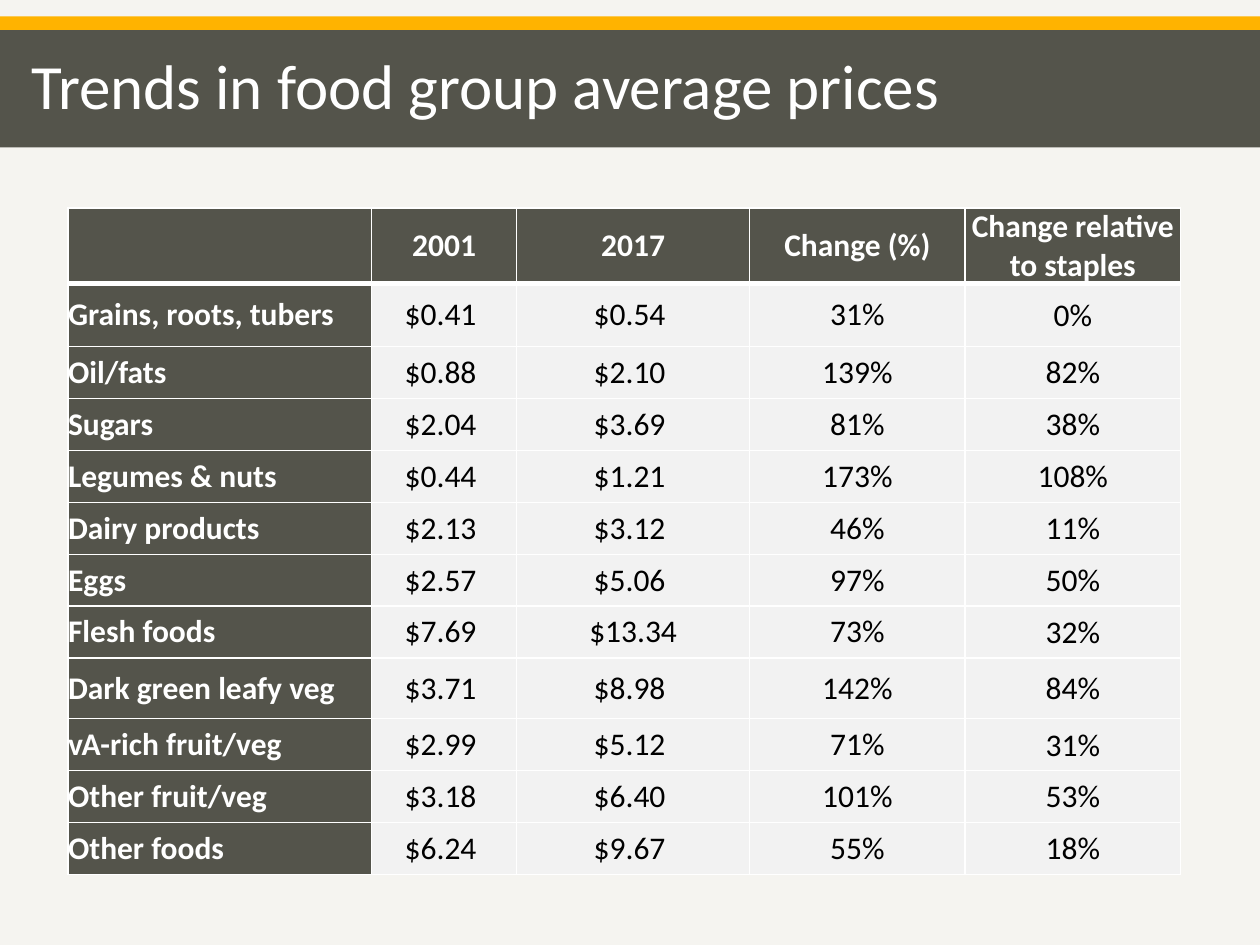
from lxml.etree import SubElement
from pptx import Presentation
from pptx.dml.color import RGBColor as RGB
from pptx.enum.shapes import MSO_SHAPE as SHAPE
from pptx.enum.text import MSO_ANCHOR as ANCHOR, PP_ALIGN as ALIGN
from pptx.oxml.ns import qn
from pptx.util import Inches, Pt

THEME = {
    "font": "Calibri", "title": Pt(36), "body": Pt(18),
    "paper": "F5F4F0", "accent": "FFB300", "dark": "54544B",
    "cell": "F2F2F2", "light": "FFFFFF", "text": "000000",
}

prs = Presentation()
prs.slide_width, prs.slide_height = W, H = Inches(10), Inches(7.5)
s = prs.slides.add_slide(prs.slide_layouts[6])
s.background.fill.solid()
s.background.fill.fore_color.rgb = RGB.from_string(THEME["paper"])


def add_run(p, text, size, color, bold=False):
    r = p.add_run()
    r.text = text
    r.font.name, r.font.size, r.font.bold = THEME["font"], THEME[size], bold
    r.font.color.rgb = RGB.from_string(THEME[color])


def set_borders(cell, **widths):
    tcPr = cell._tc.get_or_add_tcPr()
    for i, side in enumerate(("L", "R", "T", "B")):
        ln = tcPr.makeelement(qn(f"a:ln{side}"), w=str(Pt(widths.get(side, 1))))
        fill = SubElement(ln, qn("a:solidFill"))
        SubElement(fill, qn("a:srgbClr"), val=THEME["light"])
        tcPr.insert(i, ln)  # borders come before the cell's fill


# Accent stripe and title band, in shares of the slide height
STRIPE_TOP, BAND_TOP, BAND_H = 0.0173 * H, 0.032 * H, 0.124 * H
for top, height, color in ((STRIPE_TOP, BAND_TOP - STRIPE_TOP, "accent"),
                           (BAND_TOP, BAND_H, "dark")):
    sp = s.shapes.add_shape(SHAPE.RECTANGLE, 0, int(top), W, int(height))
    sp.shadow.inherit = False
    sp.fill.solid()
    sp.fill.fore_color.rgb = RGB.from_string(THEME[color])
    sp.line.fill.background()

# Title
tf = s.shapes.add_textbox(int(0.015 * W), int(BAND_TOP),
                          int(0.883 * W), int(BAND_H)).text_frame
tf.word_wrap = True
tf.vertical_anchor = ANCHOR.MIDDLE
p = tf.paragraphs[0]
p.line_spacing = 0.9
add_run(p, "Trends in food group average prices", "title", "light")

# Price table: prices keep a trailing space, as in accounting format
rows = [
    ("", "2001", "2017", "Change (%)", "Change relative to staples"),
    ("Grains, roots, tubers", "$0.41 ", "$0.54 ", "31%", "0%"),
    ("Oil/fats", "$0.88 ", "$2.10 ", "139%", "82%"),
    ("Sugars", "$2.04 ", "$3.69 ", "81%", "38%"),
    ("Legumes & nuts", "$0.44 ", "$1.21 ", "173%", "108%"),
    ("Dairy products", "$2.13 ", "$3.12 ", "46%", "11%"),
    ("Eggs", "$2.57 ", "$5.06 ", "97%", "50%"),
    ("Flesh foods", "$7.69 ", "$13.34", "73%", "32%"),
    ("Dark green leafy veg", "$3.71 ", "$8.98 ", "142%", "84%"),
    ("vA-rich fruit/veg", "$2.99 ", "$5.12 ", "71%", "31%"),
    ("Other fruit/veg", "$3.18 ", "$6.40 ", "101%", "53%"),
    ("Other foods", "$6.24 ", "$9.67 ", "55%", "18%"),
]
COL_SHARES = (0.241, 0.115, 0.185, 0.171, 0.171)
ROW_SHARE, TALL_ROWS = 0.055, {1: 0.0667, 8: 0.064}

table = s.shapes.add_table(len(rows), len(COL_SHARES), int(0.054 * W), int(0.22 * H),
                           int(sum(COL_SHARES) * W), int(0.707 * H)).table
table.horz_banding = False
for col, share in zip(table.columns, COL_SHARES):
    col.width = int(share * W)

for i, values in enumerate(rows):
    table.rows[i].height = int(TALL_ROWS.get(i, ROW_SHARE) * H)
    for j, value in enumerate(values):
        cell = table.cell(i, j)
        heading = i == 0 or j == 0
        cell.fill.solid()
        cell.fill.fore_color.rgb = RGB.from_string(THEME["dark" if heading else "cell"])
        set_borders(cell, T=3 if i == 1 else 1, B=3 if i == 0 else 1)
        if not value:
            continue
        cell.vertical_anchor = ANCHOR.MIDDLE
        inset = Inches(0.01) if i and j == 4 else 0
        cell.margin_left = cell.margin_right = cell.margin_top = inset
        cell.margin_bottom = 0
        p = cell.text_frame.paragraphs[0]
        p.alignment = ALIGN.CENTER if j else ALIGN.LEFT
        add_run(p, value, "body", "light" if heading else "text", heading)

prs.save("out.pptx")
